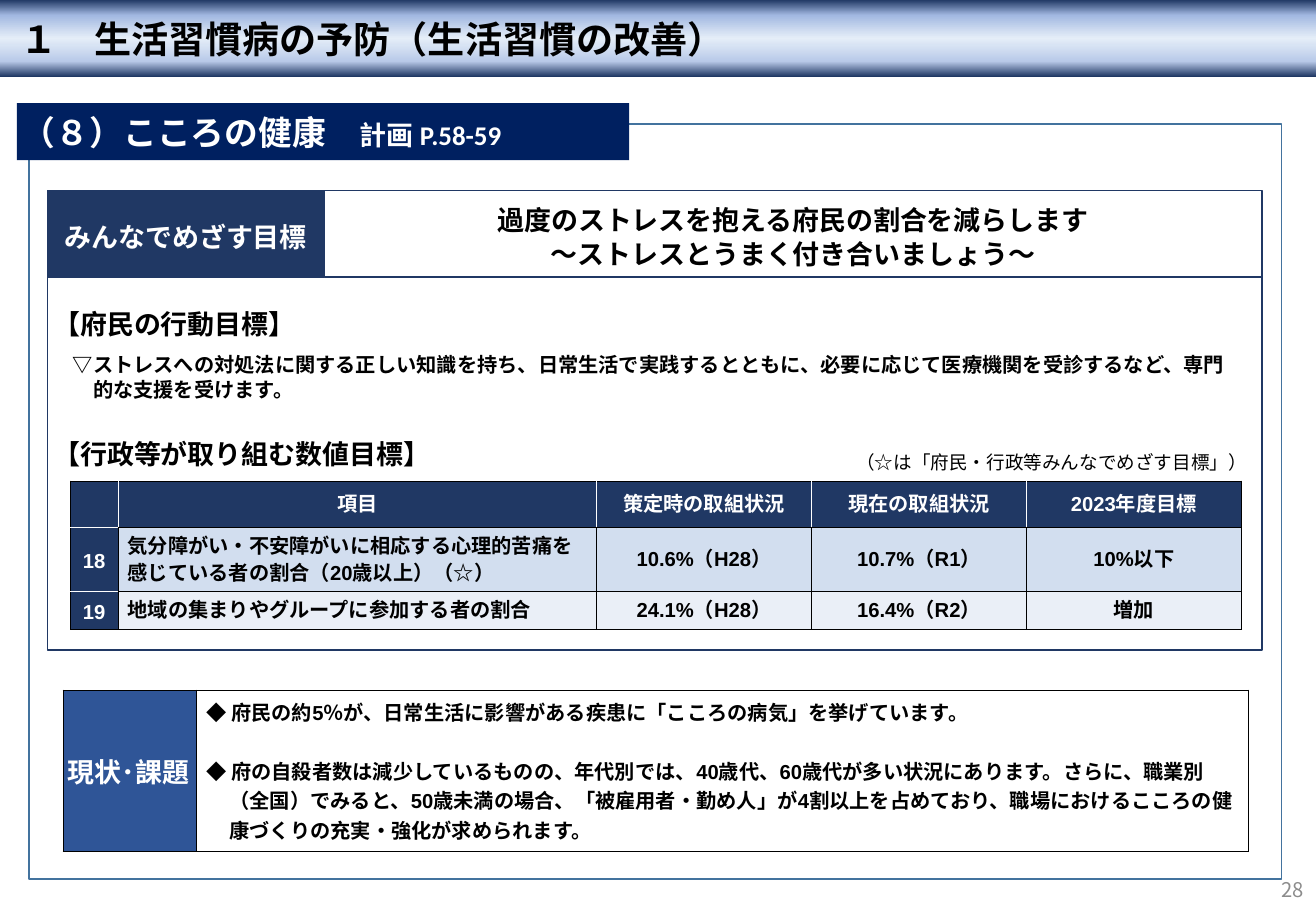
import pptx
import pptx.util
import pptx.dml.color
import pptx.enum.shapes
import pptx.enum.text
import pptx.oxml.ns
from lxml import etree
from dataclasses import dataclass

Pt = pptx.util.Pt
ALIGN = pptx.enum.text.PP_ALIGN
ANCHOR = pptx.enum.text.MSO_ANCHOR

# Content
TITLE = "１　生活習慣病の予防（生活習慣の改善）"
PAGE_NUMBER = "28"
SECTION = ("（８）こころの健康　", "計画 P.58-59")
GOAL_LABEL = "みんなでめざす目標"
GOAL = ["過度のストレスを抱える府民の割合を減らします", "～ストレスとうまく付き合いましょう～"]
HEADINGS = [(179.3, "【府民の行動目標】"), (256.3, "【行政等が取り組む数値目標】")]
ACTION = ("▽ストレスへの対処法に関する正しい知識を持ち、日常生活で実践するとともに、"
          "必要に応じて医療機関を受診するなど、専門的な支援を受けます。")
NOTE = "（☆は「府民・行政等みんなでめざす目標」）"
TARGETS = [
    ("", "項目", "策定時の取組状況", "現在の取組状況", "2023年度目標"),
    ("18", "気分障がい・不安障がいに相応する心理的苦痛を感じている者の割合（20歳以上）（☆）",
     "10.6%（H28）", "10.7%（R1）", "10%以下"),
    ("19", "地域の集まりやグループに参加する者の割合", "24.1%（H28）", "16.4%（R2）", "増加"),
]
STATUS_LABEL = "現状･課題"
STATUS = [
    "◆ 府民の約5％が、日常生活に影響がある疾患に「こころの病気」を挙げています。",
    "◆ 府の自殺者数は減少しているものの、年代別では、40歳代、60歳代が多い状況にあります。"
    "さらに、職業別（全国）でみると、50歳未満の場合、「被雇用者・勤め人」が4割以上を占めており、"
    "職場におけるこころの健康づくりの充実・強化が求められます。",
]


@dataclass(frozen=True)
class Theme:
    navy: str = "203864"
    banner: str = "002060"
    blue: str = "2F5597"
    outline: str = "43739E"
    bands: tuple = ("D2DEEF", "EAEFF7")
    title_stops: tuple = ((0, "203864"), (20, "A2B8E1"), (50, "E5EEF8"), (80, "B9CAE9"), (100, "203864"))
    white: str = "FFFFFF"
    black: str = "000000"
    grey: str = "8C8C8C"
    title: int = 22
    section: int = 20
    heading: int = 16
    body: int = 12
    note: int = 11
    asian: str = "Noto Sans CJK JP"
    shape_font: str = "Calibri"
    text_font: str = "Arial"


THEME = Theme()
INSET = (2.9, 5.8, 2.9, 2.9)
GOAL_INSET = (5.8, 5.8, 5.8, 2.9)


def rgb(code):
    return pptx.dml.color.RGBColor.from_string(code)


def style(para, size, color=THEME.black, font=THEME.text_font, bold=True,
          align=ALIGN.LEFT, spacing=None, hanging=0):
    para.alignment = align
    if spacing:
        para.line_spacing = Pt(spacing)
    if hanging:
        properties = para._p.get_or_add_pPr()
        properties.set("marL", str(Pt(hanging)))
        properties.set("indent", str(-Pt(hanging)))
    for span in para.runs:
        span.font.size = Pt(size)
        span.font.bold = bold
        span.font.color.rgb = rgb(color)
        span.font.name = font
        asian = etree.SubElement(span.font._element, pptx.oxml.ns.qn("a:ea"))
        asian.set("typeface", THEME.asian)


def set_insets(holder, insets):
    holder.margin_left, holder.margin_top, holder.margin_right, holder.margin_bottom = map(Pt, insets)


def write(box, text, size, insets=INSET, anchor=ANCHOR.MIDDLE, **look):
    frame = box.text_frame
    frame.word_wrap = True
    frame.vertical_anchor = anchor
    set_insets(frame, insets)
    frame.text = text
    for para in frame.paragraphs:
        style(para, size, **look)
    return box


def add_panel(page, place, fill=None, line=None):
    box = page.shapes.add_shape(pptx.enum.shapes.MSO_SHAPE.RECTANGLE, *map(Pt, place))
    box.shadow.inherit = False
    if fill:
        box.fill.solid()
        box.fill.fore_color.rgb = rgb(fill)
    else:
        box.fill.background()
    if line:
        box.line.color.rgb = rgb(line)
        box.line.width = Pt(1)
    else:
        box.line.fill.background()
    return box


def add_text(page, place, text, size, **look):
    return write(page.shapes.add_textbox(*map(Pt, place)), text, size, **look)


def add_grid(page, left, top, widths, heights):
    table = page.shapes.add_table(len(heights), len(widths), Pt(left), Pt(top),
                                  Pt(sum(widths)), Pt(sum(heights))).table
    for column, width in zip(table.columns, widths):
        column.width = Pt(width)
    for row, height in zip(table.rows, heights):
        row.height = Pt(height)
    return table


def fill_cell(cell, text, fill, insets, white_edges=""):
    cell.text = text
    cell.vertical_anchor = ANCHOR.MIDDLE
    set_insets(cell, insets)
    properties = cell._tc.get_or_add_tcPr()
    for side in "LRTB":
        edge = etree.SubElement(properties, pptx.oxml.ns.qn(f"a:ln{side}"), w=str(Pt(0.5)))
        paint = etree.SubElement(edge, pptx.oxml.ns.qn("a:solidFill"))
        color = THEME.white if side in white_edges else THEME.black
        etree.SubElement(paint, pptx.oxml.ns.qn("a:srgbClr"), val=color)
    cell.fill.solid()
    cell.fill.fore_color.rgb = rgb(fill)
    return cell.text_frame.paragraphs


def add_title(page):
    box = add_panel(page, (0, 0, 780, 45.4))
    box.fill.gradient()
    box.fill.gradient_angle = 270
    stops = box._element.spPr.find(".//" + pptx.oxml.ns.qn("a:gsLst"))
    for stop in list(stops):
        stops.remove(stop)
    for percent, color in THEME.title_stops:
        stop = etree.SubElement(stops, pptx.oxml.ns.qn("a:gs"), pos=str(percent * 1000))
        etree.SubElement(stop, pptx.oxml.ns.qn("a:srgbClr"), val=color)
    write(box, TITLE, THEME.title, insets=(12.1, 3.6, 7.2, 3.6), font=THEME.asian)


def add_section_banner(page):
    box = add_panel(page, (10.1, 61.2, 362.9, 33.8), THEME.banner)
    write(box, SECTION[0], THEME.section, insets=(2.9, 7.2, 2.9, 2.9))
    para = box.text_frame.paragraphs[0]
    para.add_run().text = SECTION[1]
    for old in para._p.iter(pptx.oxml.ns.qn("a:ea")):
        old.getparent().remove(old)
    style(para, THEME.section, THEME.white, THEME.shape_font, spacing=20)
    para.runs[1].font.size = Pt(THEME.heading)


def add_targets(page):
    table = add_grid(page, 41.8, 285.1, [28.1, 283.7] + [127.4] * 3, [22.8, 38, 22.5])
    last_row, last_column = len(TARGETS) - 1, len(TARGETS[0]) - 1
    for r, row in enumerate(TARGETS):
        for c, text in enumerate(row):
            header = r == 0 or c == 0
            # White rules separate neighbouring header cells
            edges = "L" * (r == 0 and c > 0) + "R" * (r == 0 and c < last_column)
            edges += "T" * (c == 0 and r > 0) + "B" * (c == 0 and r < last_row)
            fill = THEME.navy if header else THEME.bands[r - 1]
            for para in fill_cell(table.cell(r, c), text, fill, (5.8, 2.9, 5.8, 2.9), edges):
                style(para, THEME.body, THEME.white if header else THEME.black, spacing=16,
                      align=ALIGN.LEFT if c == 1 and r > 0 else ALIGN.CENTER)


def add_status(page):
    table = add_grid(page, 37.4, 409, [79.2, 623.5], [95.4])
    for para in fill_cell(table.cell(0, 0), STATUS_LABEL, THEME.blue, (2.9, 4.3, 2.9, 4.3)):
        style(para, THEME.heading, THEME.white)
    paras = fill_cell(table.cell(0, 1), "\n".join(STATUS), THEME.white, (5.8, 4.3, 5.8, 4.3))
    for para in paras:
        style(para, THEME.body, hanging=13.7)
    paras[1].space_before = Pt(17.4)


def main():
    deck = pptx.Presentation()
    deck.slide_width, deck.slide_height = Pt(780), Pt(540)
    page = deck.slides.add_slide(deck.slide_layouts[6])

    # Title, page number and section
    add_title(page)
    add_text(page, (722.9, 518.4, 56.9, 17.3), PAGE_NUMBER, THEME.body, insets=(7.2, 3.6, 7.2, 3.6),
             color=THEME.grey, font=THEME.asian, bold=False, align=ALIGN.RIGHT)
    add_panel(page, (17.3, 73.4, 742.3, 447.8), THEME.white, THEME.outline)
    add_section_banner(page)

    # Action goal and numeric targets
    for top, heading in HEADINGS:
        add_text(page, (28.8, top, 254.9, 22.3), heading, THEME.heading)
    add_text(page, (40.3, 203, 697.7, 39.6), ACTION, THEME.body, anchor=ANCHOR.TOP, spacing=14.5, hanging=12)
    add_targets(page)
    add_text(page, (475.9, 261.4, 266.4, 22.3), NOTE, THEME.note, bold=False, align=ALIGN.RIGHT)

    # Current status, then the shared goal with its frame
    add_status(page)
    add_panel(page, (28.1, 146.9, 720, 238.3), line=THEME.navy)
    goal_look = dict(insets=GOAL_INSET, font=THEME.shape_font, align=ALIGN.CENTER, spacing=20)
    label = add_panel(page, (28.1, 113, 164.2, 51.1), THEME.navy, THEME.navy)
    write(label, GOAL_LABEL, THEME.heading, color=THEME.white, **goal_look)
    statement = add_panel(page, (192.3, 113, 555.8, 51.1), THEME.white, THEME.navy)
    write(statement, "\n".join(GOAL), THEME.heading, **goal_look)

    deck.save("out.pptx")


if __name__ == "__main__":
    main()
